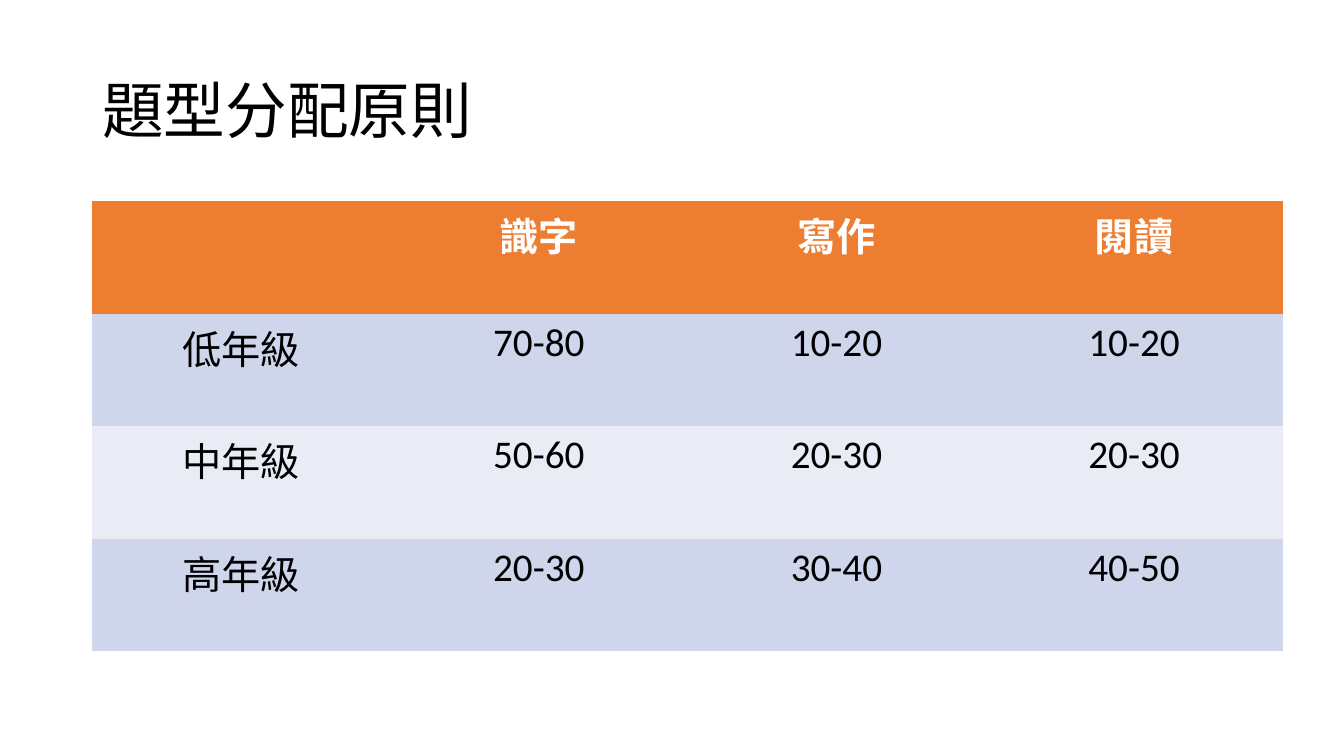
from dataclasses import dataclass

from pptx import Presentation
from pptx.dml.color import RGBColor as Rgb
from pptx.enum.text import MSO_ANCHOR as Anchor, PP_ALIGN as Align
from pptx.oxml.ns import qn
from pptx.util import Cm, Pt


@dataclass(frozen=True)
class Theme:
    font: str = "Calibri"
    title_size: int = 44
    table_size: int = 28
    ink: str = "000000"
    header_ink: str = "FFFFFF"
    header_fill: str = "ED7D31"
    band_fills: tuple = ("CFD5EA", "E9EBF5")
    plain_table_style: str = "{2D5ABB26-0587-4C30-8999-92F81FD0307C}"


class PageBuilder:
    def __init__(self, page, theme):
        self.page = page
        self.theme = theme

    def add_span(self, para, text, color, **formats):
        span = para.add_run()
        span.text = text
        span.font.color.rgb = Rgb.from_string(color)
        for name, value in {"name": self.theme.font, **formats}.items():
            setattr(span.font, name, value)

    def add_title(self, text, left, top, width, height):
        box = self.page.shapes.add_textbox(Cm(left), Cm(top), Cm(width), Cm(height))
        frame = box.text_frame
        for name, value in {"word_wrap": True, "vertical_anchor": Anchor.MIDDLE}.items():
            setattr(frame, name, value)
        para = frame.paragraphs[0]
        para.line_spacing = 0.9
        self.add_span(para, text, self.theme.ink, size=Pt(self.theme.title_size))

    def add_table(self, rows, left, top, width, height):
        theme = self.theme
        table = self.page.shapes.add_table(
            len(rows), len(rows[0]), Cm(left), Cm(top), Cm(width), Cm(height)
        ).table
        table._tbl.tblPr.find(qn("a:tableStyleId")).text = theme.plain_table_style
        for row_index, row in enumerate(rows):
            is_header = row_index == 0
            fill = theme.header_fill if is_header else theme.band_fills[(row_index - 1) % 2]
            color = theme.header_ink if is_header else theme.ink
            for column_index, text in enumerate(row):
                cell = table.cell(row_index, column_index)
                cell.fill.solid()
                cell.fill.fore_color.rgb = Rgb.from_string(fill)
                if text:
                    para = cell.text_frame.paragraphs[0]
                    para.alignment = Align.CENTER
                    self.add_span(para, text, color, size=Pt(theme.table_size), bold=is_header)


def main():
    deck = Presentation()
    deck.slide_width, deck.slide_height = Cm(33.87), Cm(19.05)
    page = deck.slides.add_slide(deck.slide_layouts[6])
    builder = PageBuilder(page, Theme())
    builder.add_title("題型分配原則", 2.33, 1.01, 29.21, 3.68)
    question_shares = [
        ("", "識字", "寫作", "閱讀"),
        ("低年級", "70-80", "10-20", "10-20"),
        ("中年級", "50-60", "20-30", "20-30"),
        ("高年級", "20-30", "30-40", "40-50"),
    ]
    builder.add_table(question_shares, 2.33, 5.07, 30, 11.34)
    deck.save("out.pptx")


if __name__ == "__main__":
    main()
